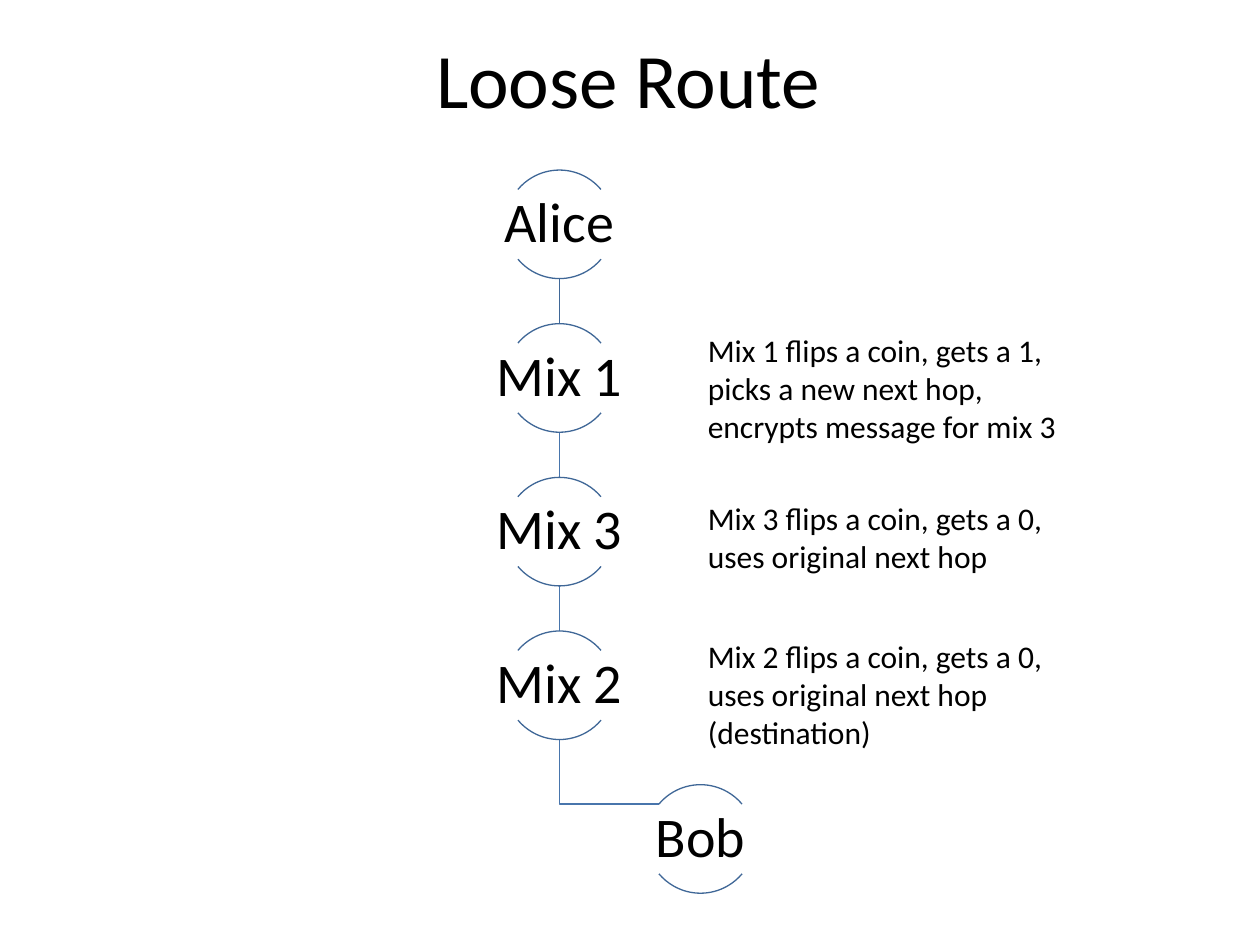
from dataclasses import dataclass
from math import cos, radians, sin

from pptx import Presentation
from pptx.dml.color import RGBColor
from pptx.enum.shapes import MSO_CONNECTOR, MSO_SHAPE
from pptx.enum.text import MSO_ANCHOR as ANCHOR, MSO_AUTO_SIZE as FIT, PP_ALIGN as ALIGN
from pptx.oxml.ns import qn
from pptx.util import Pt


@dataclass(frozen=True)
class Theme:
    """Colours, font and sizes of the slide."""
    ink: RGBColor = RGBColor(0x00, 0x00, 0x00)
    arc: RGBColor = RGBColor(0x3F, 0x67, 0x97)
    link: RGBColor = RGBColor(0x48, 0x75, 0xAC)
    font: str = "Calibri"
    title: float = 44
    node: float = 32
    note: float = 18
    stroke: float = 0.75


THEME = Theme()
DIAMETER, PITCH, ARC_START = 62, 87.8, 40
LABEL_W, LABEL_H = 124, 39.6
HOPS = ["Alice", "Mix 1", "Mix 3", "Mix 2"]
DESTINATION = "Bob"
NOTES = [
    (185.8, 72.7, "Mix 1 flips a coin, gets a 1, picks a new next hop, encrypts message for mix 3"),
    (281.5, 51, "Mix 3 flips a coin, gets a 0, uses original next hop"),
    (360.7, 72.7, "Mix 2 flips a coin, gets a 0, uses original next hop (destination)"),
]


def add_text(slide, text, box, size, align=ALIGN.LEFT, anchor=ANCHOR.TOP,
             inset=None, spacing=None, fit=FIT.NONE):
    """Place one paragraph of text in a box given in points."""
    tf = slide.shapes.add_textbox(*map(Pt, box)).text_frame
    tf.word_wrap = True
    tf.auto_size = fit
    tf.vertical_anchor = anchor
    if inset is not None:
        tf.margin_left = tf.margin_top = tf.margin_right = tf.margin_bottom = Pt(inset)
    p = tf.paragraphs[0]
    p.alignment = align
    p.line_spacing = spacing
    r = p.add_run()
    r.text = text
    r.font.name, r.font.size = THEME.font, Pt(size)
    r.font.color.rgb = THEME.ink


def style_line(line, color):
    """Give a line its colour and the common width."""
    line.color.rgb = color
    line.width = Pt(THEME.stroke)


def add_node(slide, text, left, top):
    """Draw a label between an upper and a lower arc."""
    for start, end in ((180 + ARC_START, 360 - ARC_START), (ARC_START, 180 - ARC_START)):
        sp = slide.shapes.add_shape(MSO_SHAPE.ARC, *map(Pt, (left, top, DIAMETER, DIAMETER)))
        sp.adjustments[0], sp.adjustments[1] = start * 0.6, end * 0.6
        sp.fill.background()
        sp.shadow.inherit = False
        style_line(sp.line, THEME.arc)
    box = (left + (DIAMETER - LABEL_W) / 2, top + (DIAMETER - LABEL_H) / 2, LABEL_W, LABEL_H)
    add_text(slide, text, box, THEME.node, align=ALIGN.CENTER, anchor=ANCHOR.MIDDLE,
             inset=1.6, spacing=0.9)


def add_link(slide, x, top, color):
    """Draw the straight link between two stacked nodes."""
    cx = slide.shapes.add_connector(MSO_CONNECTOR.STRAIGHT, *map(
        Pt, (x, top, x, top + PITCH - DIAMETER)))
    style_line(cx.line, color)
    sp_pr = cx._element.spPr
    sp_pr.append(sp_pr.makeelement(qn("a:effectLst"), {}))


def add_elbow(slide, x, top, end_x, end_y):
    """Draw the bent link down and across to the destination."""
    builder = slide.shapes.build_freeform(Pt(x), Pt(top))
    builder.add_line_segments([(Pt(x), Pt(end_y)), (Pt(end_x), Pt(end_y))], close=False)
    sp = builder.convert_to_shape()
    sp.fill.background()
    sp.shadow.inherit = False
    style_line(sp.line, THEME.link)


def add_route(slide, left, top, shift):
    """Draw the chain of hops and the destination, set off to the right."""
    radius, last = DIAMETER / 2, len(HOPS) - 1
    center = left + radius
    end_top = top + len(HOPS) * PITCH
    angle = radians(ARC_START)
    add_elbow(slide, center, top + last * PITCH + DIAMETER,
              center + shift - radius * cos(angle), end_top + radius * (1 - sin(angle)))
    for i in range(last):
        add_link(slide, center, top + i * PITCH + DIAMETER, THEME.link if i else THEME.arc)
    for i, hop in enumerate(HOPS):
        add_node(slide, hop, left, top + i * PITCH)
    add_node(slide, DESTINATION, left + shift, end_top)


def add_notes(slide, left, width):
    """Place the remarks beside the mixes."""
    for top, height, text in NOTES:
        add_text(slide, text, (left, top, width, height), THEME.note, fit=FIT.SHAPE_TO_FIT_TEXT)


def main():
    """Build and save the slide."""
    prs = Presentation()
    prs.slide_width, prs.slide_height = Pt(720), Pt(540)
    slide = prs.slides.add_slide(prs.slide_layouts[6])
    add_route(slide, left=288.7, top=97.2, shift=80.6)
    add_text(slide, "Loose Route", (23.8, 14.4, 670.3, 60.5), THEME.title,
             align=ALIGN.CENTER, fit=FIT.SHAPE_TO_FIT_TEXT)
    add_notes(slide, left=397.4, width=234)
    prs.save("out.pptx")


if __name__ == "__main__":
    main()
